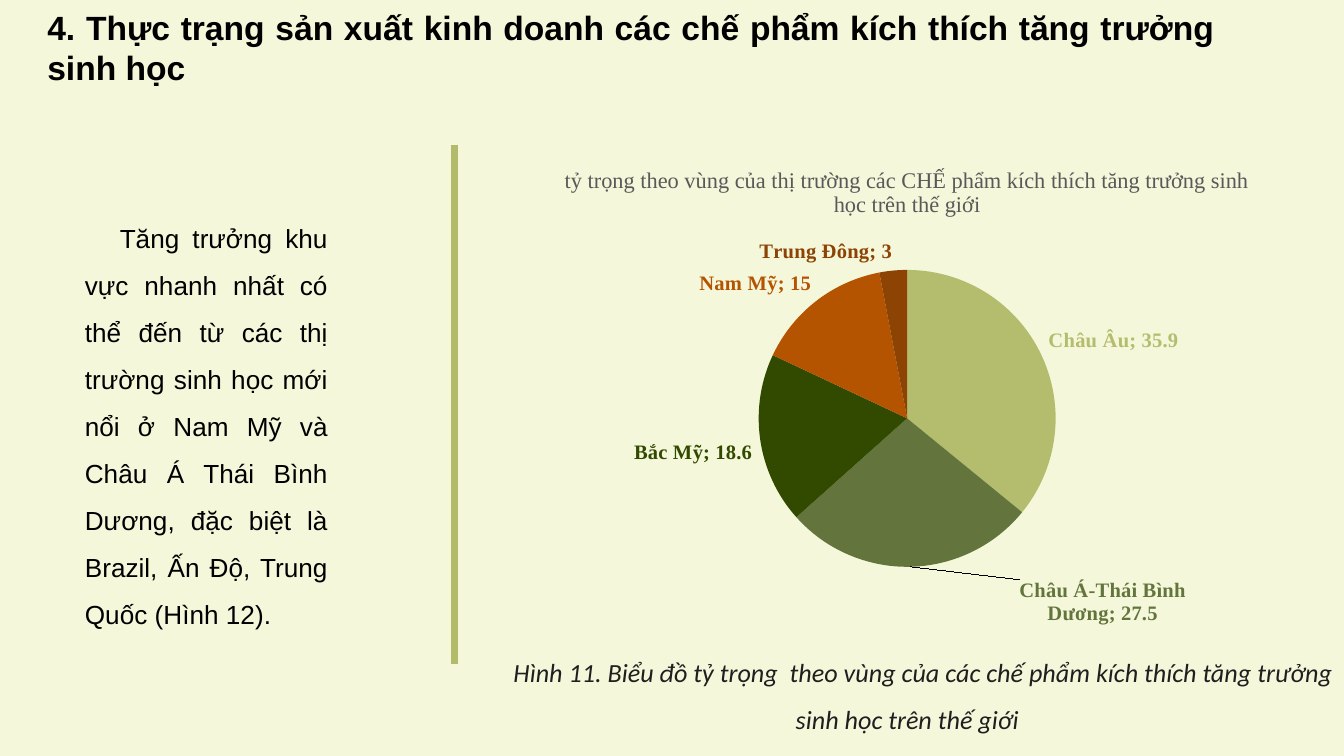
import pptx
import pptx.util
import pptx.chart.data
import pptx.oxml
from pptx.dml.color import RGBColor
from pptx.enum.chart import XL_CHART_TYPE, XL_LABEL_POSITION
from pptx.enum.shapes import MSO_CONNECTOR
from pptx.enum.text import MSO_ANCHOR, MSO_AUTO_SIZE, PP_ALIGN
from pptx.oxml.ns import nsdecls, qn

Cm, Pt = pptx.util.Cm, pptx.util.Pt

CREAM = RGBColor(0xF4, 0xF7, 0xDA)
BLACK = RGBColor(0, 0, 0)
INK = RGBColor(0x1F, 0x1F, 0x1F)
GRAY = RGBColor(0x59, 0x59, 0x59)
RULE = RGBColor(0xB2, 0xBB, 0x6A)
LIME = RGBColor(0xB4, 0xBD, 0x6E)
OLIVE = RGBColor(0x63, 0x75, 0x3C)
FOREST = RGBColor(0x32, 0x4A, 0x00)
ORANGE = RGBColor(0xB4, 0x54, 0x00)
BROWN = RGBColor(0x8C, 0x43, 0x03)


def write(sp, text, box, size, font="Arial", color=BLACK, bold=False,
          italic=False, align=PP_ALIGN.JUSTIFY, indent=0, spacing=1):
    sp.left, sp.top, sp.width, sp.height = [Cm(v) for v in box]
    tf = sp.text_frame
    tf.word_wrap = True
    tf.auto_size = MSO_AUTO_SIZE.NONE
    tf.vertical_anchor = MSO_ANCHOR.TOP
    p = tf.paragraphs[0]
    p.alignment, p.line_spacing, p.space_before = align, spacing, Pt(0)
    pPr = p._p.get_or_add_pPr()
    pPr.set("marL", "0")
    pPr.set("indent", str(Cm(indent)))
    pPr.append(pptx.oxml.parse_xml(f"<a:buNone {nsdecls('a')}/>"))
    r = p.add_run()
    r.text = text
    r.font.name, r.font.size, r.font.color.rgb = font, Pt(size), color
    r.font.bold, r.font.italic = bold, italic


def manual_layout(x, y, w=None, h=None, inner=False):
    parts = '<c:layoutTarget val="inner"/>' if inner else ""
    if inner:
        parts += '<c:xMode val="edge"/><c:yMode val="edge"/>'
    for tag, value in zip("xywh", (x, y, w, h)):
        if value is not None:
            parts += f'<c:{tag} val="{value}"/>'
    return pptx.oxml.parse_xml(
        f"<c:layout {nsdecls('c')}><c:manualLayout>{parts}</c:manualLayout></c:layout>")


prs = pptx.Presentation()
prs.slide_width, prs.slide_height = Cm(25.4), Cm(14.29)
s = prs.slides.add_slide(prs.slide_layouts[1])
s.background.fill.solid()
s.background.fill.fore_color.rgb = CREAM

# Title and body text
write(s.shapes.title,
      "4. Thực trạng sản xuất kinh doanh các chế phẩm kích thích tăng trưởng sinh học",
      (0.64, 0, 22.58, 1.8), 18, bold=True)
write(s.placeholders[1],
      "Tăng trưởng khu vực nhanh nhất có thể đến từ các thị trường sinh học mới nổi "
      "ở Nam Mỹ và Châu Á Thái Bình Dương, đặc biệt là Brazil, Ấn Độ, Trung Quốc (Hình 12).",
      (1.35, 3.78, 5.1, 8.23), 14, indent=0.66, spacing=1.5)

# Figure caption
write(s.shapes.add_textbox(0, 0, 0, 0),
      "Hình 11. Biểu đồ tỷ trọng  theo vùng của các chế phẩm kích thích tăng trưởng "
      "sinh học trên thế giới",
      (8.59, 11.98, 17.12, 2), 14, font="Calibri", color=INK, italic=True,
      align=PP_ALIGN.CENTER, indent=0.61, spacing=1.5)

# Pie chart of regional shares
regions = [("Châu Âu", 35.9, LIME), ("Châu Á-Thái Bình Dương", 27.5, OLIVE),
           ("Bắc Mỹ", 18.6, FOREST), ("Nam Mỹ", 15, ORANGE), ("Trung Đông", 3, BROWN)]
data = pptx.chart.data.CategoryChartData()
data.categories = [name for name, _, _ in regions]
data.add_series("Series 1", [share for _, share, _ in regions])
chart = s.shapes.add_chart(XL_CHART_TYPE.PIE, Cm(8.89), Cm(2.74), Cm(16.51), Cm(9.4),
                           data).chart
chart.font.name, chart.font.size, chart.font.color.rgb = "Times New Roman", Pt(14), BLACK
chart.has_legend = False
chart.has_title = True
tf = chart.chart_title.text_frame
tf.text = ("tỷ trọng theo vùng của thị trường các CHẾ phẩm kích thích tăng trưởng "
           "sinh học trên thế giới")
font = tf.paragraphs[0].runs[0].font
font.name, font.size, font.bold = "Times New Roman", Pt(12), False
font.color.rgb = GRAY

plot = chart.plots[0]
plot.vary_by_categories = True
plot_area = chart._chartSpace.chart.plotArea
for old in plot_area.findall(qn("c:layout")):
    plot_area.remove(old)
plot_area.insert(0, manual_layout(0.33, 0.25, 0.34, 0.6, inner=True))

# Slice colours and matching labels
series = plot.series[0]
for i, (_, _, color) in enumerate(regions):
    point = series.points[i]
    point.format.fill.solid()
    point.format.fill.fore_color.rgb = color
    label = point.data_label
    label.font.name, label.font.size, label.font.bold = "Times New Roman", Pt(11), True
    label.font.color.rgb = color
    label.position = XL_LABEL_POSITION.OUTSIDE_END
    dLbl = label._dLbl
    dLbl.find(qn("c:showCatName")).set("val", "1")
    dLbl.find(qn("c:showPercent")).set("val", "0")
    dLbl.append(pptx.oxml.parse_xml(f"<c:separator {nsdecls('c')}>; </c:separator>"))
    if i == 1:
        dLbl.insert(1, manual_layout(0.22, 0.01))
labels = series.data_labels
labels.show_value = labels.show_category_name = True
labels.show_percentage = False

# Vertical divider
line = s.shapes.add_connector(MSO_CONNECTOR.STRAIGHT, Cm(8.59), Cm(2.74), Cm(8.59), Cm(12.55))
line.line.color.rgb = RULE
line.line.width = Pt(4.25)
line._element.spPr.append(pptx.oxml.parse_xml(f"<a:effectLst {nsdecls('a')}/>"))

prs.save("out.pptx")
